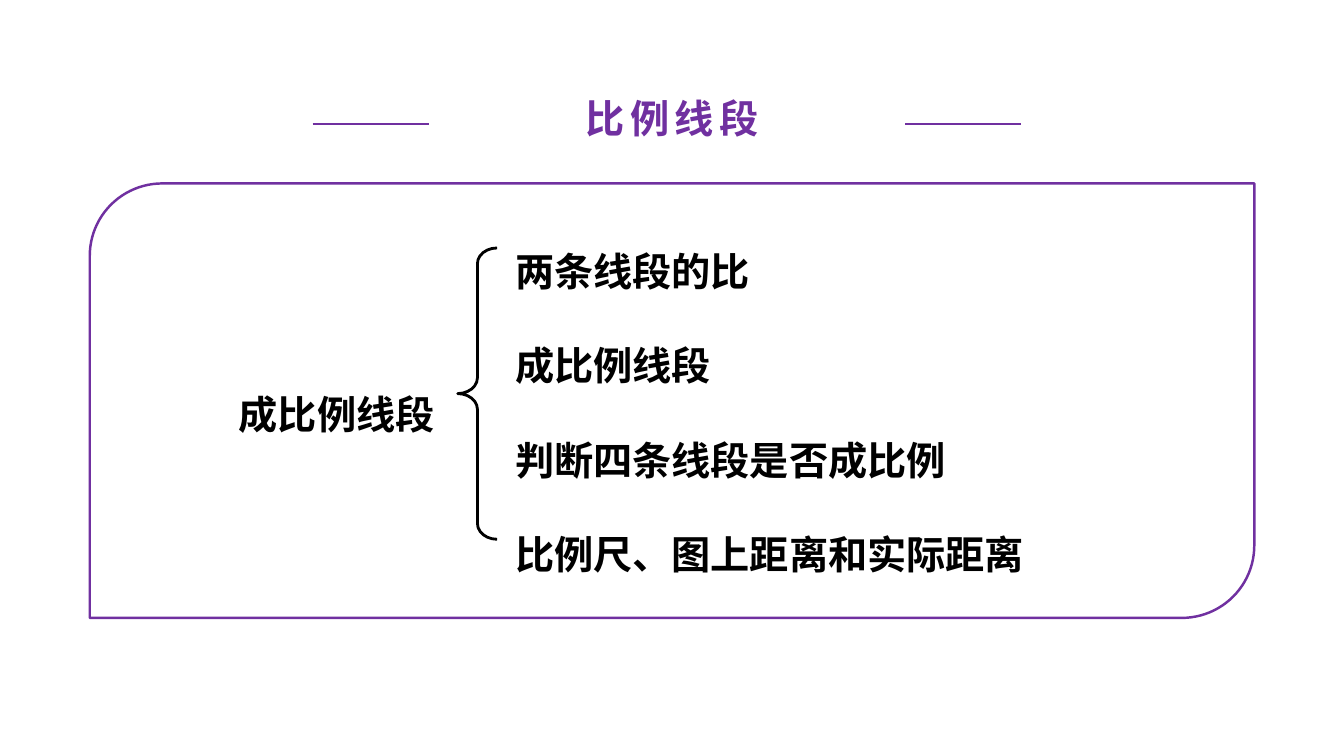
from pptx import Presentation
from pptx.dml.color import RGBColor
from pptx.enum.shapes import MSO_CONNECTOR, MSO_SHAPE
from pptx.enum.text import MSO_ANCHOR, MSO_AUTO_SIZE, PP_ALIGN
from pptx.oxml.ns import qn
from pptx.util import Inches, Pt
from lxml.etree import SubElement

PURPLE, BLACK = "7030A0", "000000"


def rgb(value):
    return RGBColor.from_string(value)


class SummarySlide:
    font = "Noto Sans CJK SC"
    size = 28

    def __init__(self, prs):
        self.shapes = prs.slides.add_slide(prs.slide_layouts[6]).shapes

    def stroke(self, sp, color, width):
        sp.line.color.rgb = rgb(color)
        sp.line.width = Pt(width)

    def outline(self, kind, box, color, width, adjustments=()):
        sp = self.shapes.add_shape(kind, *map(Inches, box))
        sp.shadow.inherit = False
        sp.fill.background()
        self.stroke(sp, color, width)
        for i, value in enumerate(adjustments):
            sp.adjustments[i] = value

    def rule(self, x, y, length, color, width):
        """Draw a horizontal line."""
        ends = map(Inches, (x, y, x + length, y))
        sp = self.shapes.add_connector(MSO_CONNECTOR.STRAIGHT, *ends)
        self.stroke(sp, color, width)
        SubElement(sp._element.spPr, qn("a:effectLst"))

    def text(self, box, lines, color=BLACK, spacing=None, tracking=None,
             align=PP_ALIGN.LEFT, **frame):
        """Write one paragraph per line; frame holds text frame settings."""
        tf = self.shapes.add_textbox(*map(Inches, box)).text_frame
        for name, value in frame.items():
            setattr(tf, name, value)
        for i, line in enumerate(lines):
            p = tf.paragraphs[0] if i == 0 else tf.add_paragraph()
            p.alignment, p.line_spacing = align, spacing
            r = p.add_run()
            r.text = line
            style = {"name": self.font, "size": Pt(self.size), "bold": True}
            for name, value in style.items():
                setattr(r.font, name, value)
            r.font.color.rgb = rgb(color)
            rPr = r._r.get_or_add_rPr()
            SubElement(rPr, qn("a:ea"), typeface=self.font)
            if tracking:
                rPr.set("spc", str(tracking * 100))


def main():
    prs = Presentation()
    prs.slide_width, prs.slide_height = Inches(13.33), Inches(7.5)
    s = SummarySlide(prs)

    s.outline(MSO_SHAPE.ROUND_2_DIAG_RECTANGLE, (0.89, 1.82, 11.55, 4.31),
              PURPLE, 1.75)
    s.text((4.04, 0.85, 5.25, 0.63), ["比例线段"], PURPLE, tracking=4,
           align=PP_ALIGN.CENTER, word_wrap=True,
           vertical_anchor=MSO_ANCHOR.MIDDLE,
           margin_left=Inches(0.13), margin_right=Inches(0.13),
           margin_top=Inches(0.07), margin_bottom=Inches(0.07))
    for x in (8.98, 3.1):
        s.rule(x, 1.23, 1.15, PURPLE, 1)

    topics = ["两条线段的比", "成比例线段", "判断四条线段是否成比例",
              "比例尺、图上距离和实际距离"]
    fitted = {"word_wrap": False, "auto_size": MSO_AUTO_SIZE.SHAPE_TO_FIT_TEXT}
    s.text((5.01, 1.94, 5.28, 3.87), topics, spacing=2.0, **fitted)
    s.text((2.27, 3.36, 2.17, 0.9), ["成比例线段"], spacing=2.0, **fitted)
    s.outline(MSO_SHAPE.LEFT_BRACE, (4.54, 2.46, 0.39, 2.89), BLACK, 2,
              (0.4, 0.5))

    prs.save("out.pptx")


if __name__ == "__main__":
    main()
